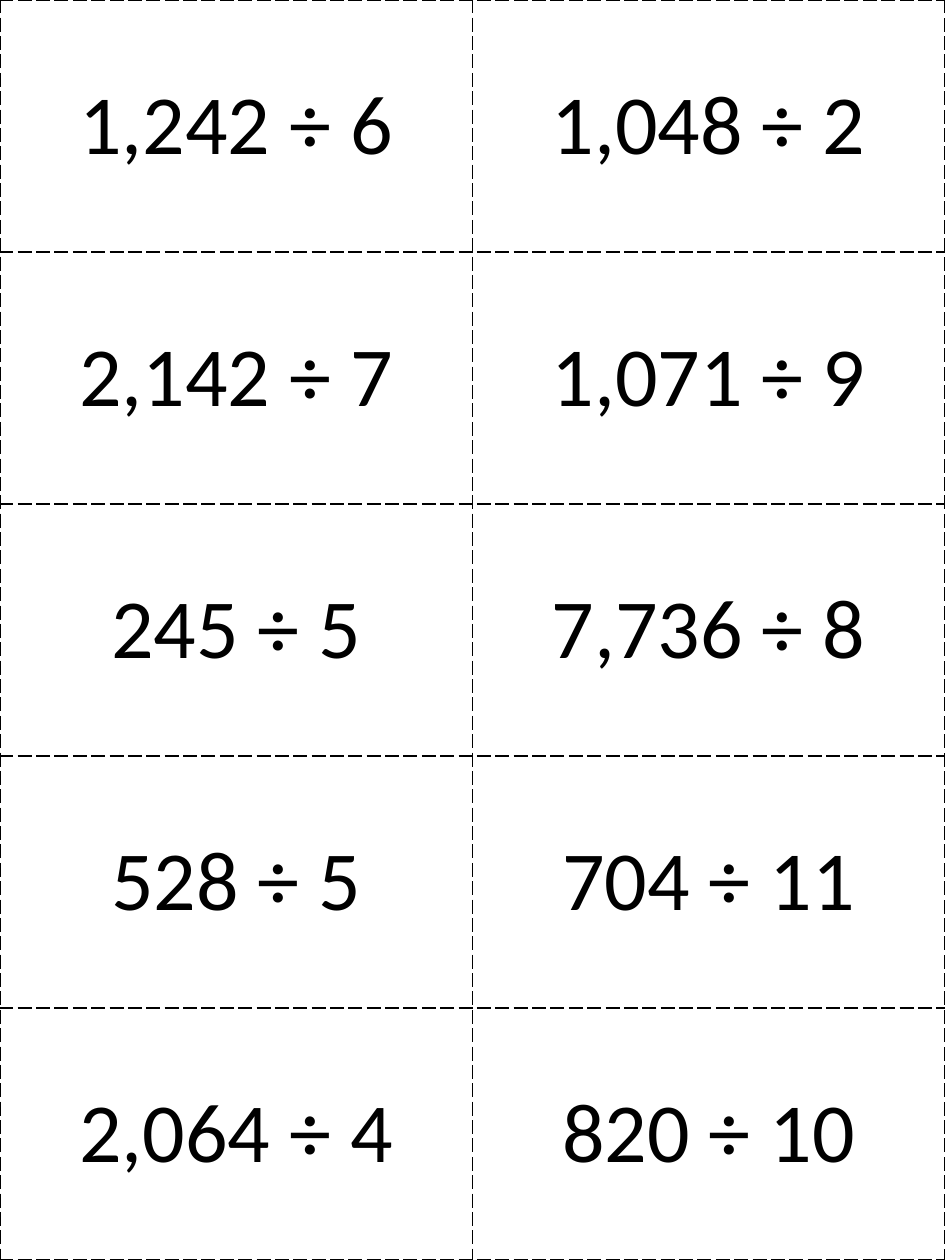
from lxml.etree import SubElement
from pptx import Presentation
from pptx.dml.color import RGBColor
from pptx.enum.text import MSO_ANCHOR, PP_ALIGN
from pptx.oxml.ns import qn
from pptx.util import Cm, Pt

PAGE_WIDTH, PAGE_HEIGHT = Cm(19.05), Cm(25.4)
PROBLEMS = [
    ("1,242 ÷ 6", "1,048 ÷ 2"),
    ("2,142 ÷ 7", "1,071 ÷ 9"),
    ("245 ÷ 5", "7,736 ÷ 8"),
    ("528 ÷ 5", "704 ÷ 11"),
    ("2,064 ÷ 4", "820 ÷ 10"),
]


def color(hex_text):
    return RGBColor.from_string(hex_text)


def apply(target, formats):
    for name, value in formats.items():
        setattr(target, name, value)


class CardSheet:
    ink = "000000"
    paper = "FFFFFF"
    font = {"name": "Calibri", "size": Pt(48), "bold": False}
    cell = {
        "vertical_anchor": MSO_ANCHOR.MIDDLE,
        "margin_left": Cm(0.18),
        "margin_right": Cm(0.18),
        "margin_top": 0,
        "margin_bottom": 0,
    }

    def __init__(self, page):
        self.page = page

    def cut_lines(self, cell):
        """Draw a dashed line on all four sides of a cell."""
        properties = cell._tc.get_or_add_tcPr()
        for side in ("a:lnL", "a:lnR", "a:lnT", "a:lnB"):
            line = SubElement(properties, qn(side), w=str(Pt(1)))
            fill = SubElement(line, qn("a:solidFill"))
            SubElement(fill, qn("a:srgbClr"), val=self.ink)
            SubElement(line, qn("a:prstDash"), val="lgDash")

    def card(self, cell, text):
        apply(cell, self.cell)
        self.cut_lines(cell)
        cell.fill.solid()
        cell.fill.fore_color.rgb = color(self.paper)
        para = cell.text_frame.paragraphs[0]
        para.alignment = PP_ALIGN.CENTER
        span = para.add_run()
        span.text = text
        apply(span.font, self.font)
        span.font.color.rgb = color(self.ink)

    def grid(self, rows):
        table = self.page.shapes.add_table(
            len(rows), len(rows[0]), 0, 0, PAGE_WIDTH, PAGE_HEIGHT
        ).table
        apply(table, {"first_row": False, "horz_banding": False})
        for row, texts in enumerate(rows):
            for column, text in enumerate(texts):
                self.card(table.cell(row, column), text)


def main():
    deck = Presentation()
    apply(deck, {"slide_width": PAGE_WIDTH, "slide_height": PAGE_HEIGHT})

    # Blank page filled by one sheet of division cards
    page = deck.slides.add_slide(deck.slide_layouts[6])
    CardSheet(page).grid(PROBLEMS)

    deck.save("out.pptx")


if __name__ == "__main__":
    main()
